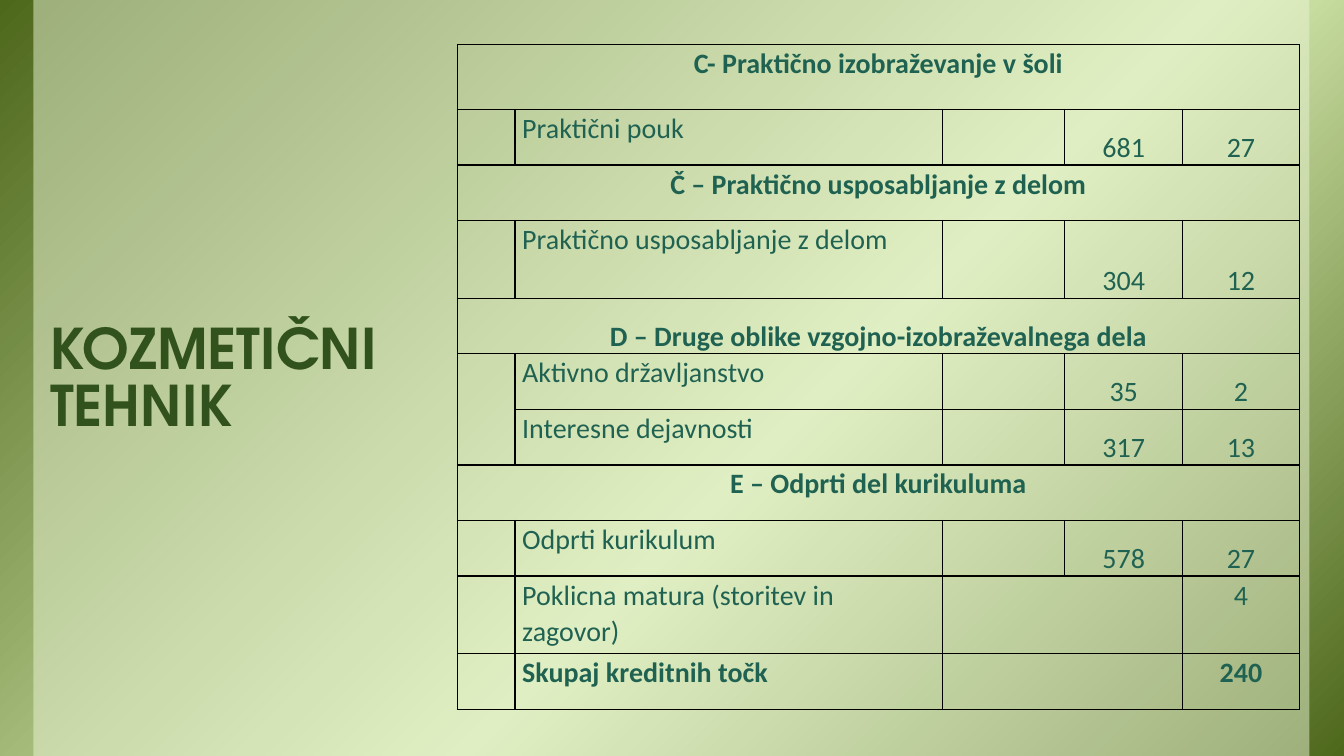
from copy import deepcopy

from lxml import etree
from pptx import Presentation
from pptx.dml.color import RGBColor
from pptx.enum.shapes import MSO_SHAPE
from pptx.enum.text import MSO_ANCHOR, PP_ALIGN
from pptx.oxml.ns import qn
from pptx.util import Cm, Pt

RECTANGLE = MSO_SHAPE.RECTANGLE
TOP, BOTTOM = MSO_ANCHOR.TOP, MSO_ANCHOR.BOTTOM
LEFT, CENTER = PP_ALIGN.LEFT, PP_ALIGN.CENTER

COLORS = {"edge": "4D671B", "glow": "D6EAAF", "veil": "EBF5D7",
          "title": "31521C", "text": "206252", "border": "000000"}
TITLE_FONT, TABLE_FONT = "TeX Gyre Adventor", "Calibri"

TITLE = "KOZMETIČNI TEHNIK"
# Kind of row, label, hours, credits, height in cm, anchor of heading or numbers
ROWS = [
    ("heading", "C- Praktično izobraževanje v šoli", "", "", 1.64, TOP),
    ("subject", "Praktični pouk", "681", "27", 1.4, BOTTOM),
    ("heading", "Č – Praktično usposabljanje z delom", "", "", 1.4, TOP),
    ("subject", "Praktično usposabljanje z delom", "304", "12", 1.96, BOTTOM),
    ("heading", "D – Druge oblike vzgojno-izobraževalnega dela", "", "", 1.4, BOTTOM),
    ("subject", "Aktivno državljanstvo", "35", "2", 1.4, BOTTOM),
    ("subject", "Interesne dejavnosti", "317", "13", 1.4, BOTTOM),
    ("heading", "E – Odprti del kurikuluma", "", "", 1.4, TOP),
    ("subject", "Odprti kurikulum", "578", "27", 1.4, BOTTOM),
    ("credits", "Poklicna matura (storitev in zagovor)", "", "4", 1.96, TOP),
    ("total", "Skupaj kreditnih točk", "", "240", 1.4, TOP),
]
COLUMN_WIDTHS = [1.45, 10.77, 3.08, 2.98, 2.93]
SHARED_NUMBER_ROWS = (5, 6)


def color(name):
    return RGBColor.from_string(COLORS[name])


def add_panel(slide, left, width, height):
    panel = slide.shapes.add_shape(RECTANGLE, left, 0, width, height)
    panel.shadow.inherit = False
    panel.line.fill.background()
    return panel


def fill_diagonal(panel):
    """Shade from dark to light to dark, from the top left corner down."""
    panel.fill.gradient()
    panel.fill.gradient_angle = 315
    stop_list = panel._element.spPr.find(".//" + qn("a:gsLst"))
    stop_list.append(deepcopy(stop_list[-1]))
    stops = [(0, "edge"), (0.58, "glow"), (1, "edge")]
    for stop, (position, name) in zip(panel.fill.gradient_stops, stops):
        stop.position = position
        stop.color.rgb = color(name)


def fill_translucent(panel, name, alpha):
    panel.fill.solid()
    panel.fill.fore_color.rgb = color(name)
    tint = panel._element.spPr.find(".//" + qn("a:srgbClr"))
    etree.SubElement(tint, qn("a:alpha")).set("val", str(alpha * 1000))


def style_text(frame, font, size, color_name, bold, align, spacing):
    paragraph = frame.paragraphs[0]
    paragraph.alignment = align
    paragraph.line_spacing = spacing
    for run in paragraph.runs:
        run.font.name = font
        run.font.size = Pt(size)
        run.font.bold = bold
        run.font.color.rgb = color(color_name)


def outline_cell(cell):
    cell.fill.background()
    properties = cell._tc.get_or_add_tcPr()
    for index, side in enumerate(("a:lnL", "a:lnR", "a:lnT", "a:lnB")):
        line = etree.Element(qn(side), w=str(Pt(1)))
        fill = etree.SubElement(line, qn("a:solidFill"))
        etree.SubElement(fill, qn("a:srgbClr")).set("val", COLORS["border"])
        properties.insert(index, line)


def write_cell(cell, text, bold, align, anchor):
    cell.text_frame.text = text
    cell.vertical_anchor = anchor
    style_text(cell.text_frame, TABLE_FONT, 20, "text", bold, align, 1.07)


def add_curriculum(slide):
    table = slide.shapes.add_table(
        len(ROWS), len(COLUMN_WIDTHS), Cm(11.53), Cm(1.12),
        Cm(sum(COLUMN_WIDTHS)), Cm(sum(row[4] for row in ROWS))).table
    table.first_row = table.horz_banding = False
    for column, width in zip(table.columns, COLUMN_WIDTHS):
        column.width = Cm(width)
    for cell in table.iter_cells():
        cell.margin_left = cell.margin_right = Cm(0.18)
        cell.margin_top = cell.margin_bottom = 0
        outline_cell(cell)

    for index, (kind, label, hours, credits, height, anchor) in enumerate(ROWS):
        table.rows[index].height = Cm(height)
        cells = table.rows[index].cells
        if kind == "heading":
            cells[0].merge(cells[4])
            write_cell(cells[0], label, True, CENTER, anchor)
            continue
        bold = kind == "total"
        write_cell(cells[1], label, bold, LEFT, TOP)
        write_cell(cells[4], credits, bold, CENTER, anchor)
        if kind == "subject":
            write_cell(cells[3], hours, bold, CENTER, anchor)
        else:
            cells[2].merge(cells[3])
    first, last = SHARED_NUMBER_ROWS
    table.cell(first, 0).merge(table.cell(last, 0))


def add_title(slide):
    box = slide.shapes.add_textbox(Cm(0.94), Cm(7.32), Cm(11.2), Cm(3.89))
    frame = box.text_frame
    frame.word_wrap = True
    frame.vertical_anchor = BOTTOM
    frame.margin_left = frame.margin_right = Cm(0.33)
    frame.margin_top = frame.margin_bottom = Cm(0.18)
    frame.text = TITLE
    style_text(frame, TITLE_FONT, 40, "title", True, LEFT, 0.85)


def main():
    deck = Presentation()
    deck.slide_width, deck.slide_height = Cm(33.87), Cm(19.05)
    slide = deck.slides.add_slide(deck.slide_layouts[6])
    fill_diagonal(add_panel(slide, 0, deck.slide_width, deck.slide_height))
    veil = add_panel(slide, Cm(0.84), Cm(32.16), deck.slide_height)
    fill_translucent(veil, "veil", 50)
    add_title(slide)
    add_curriculum(slide)
    deck.save("out.pptx")


if __name__ == "__main__":
    main()
